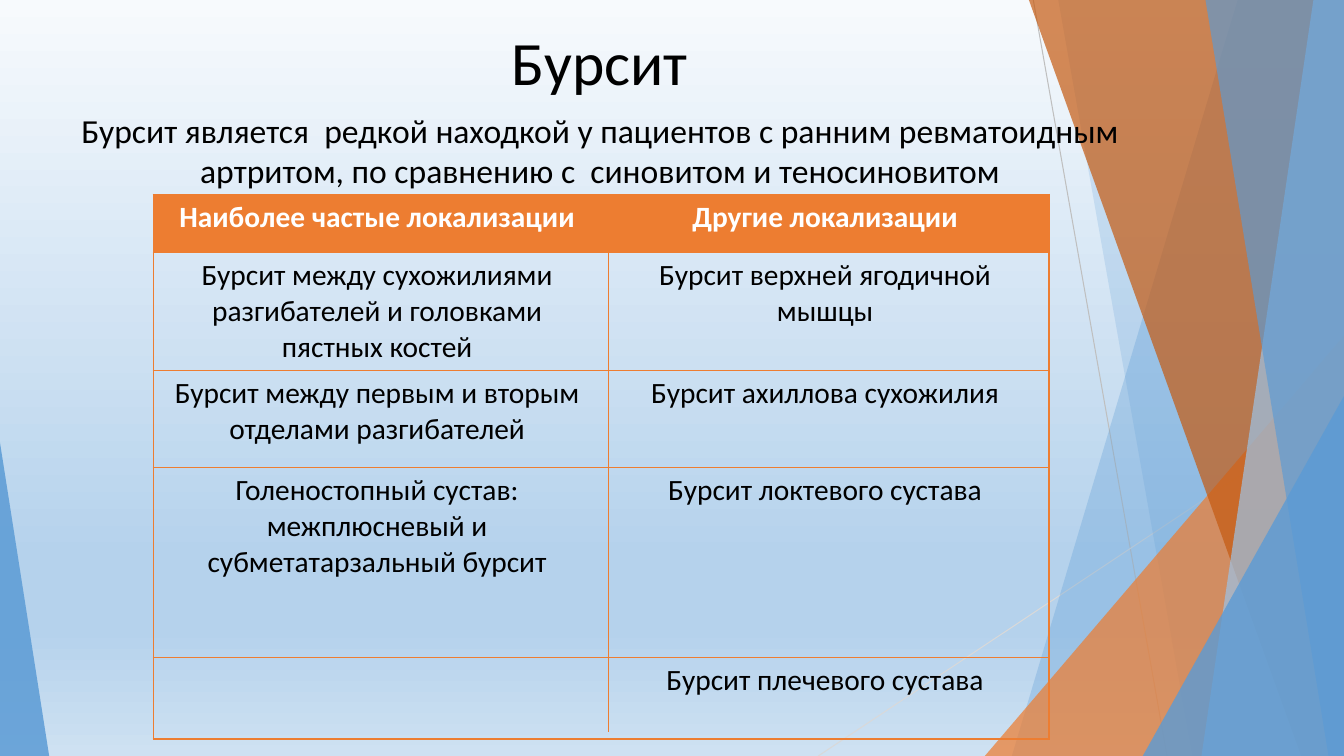
from copy import deepcopy
from dataclasses import dataclass

from lxml.etree import SubElement
from pptx import Presentation
from pptx.dml.color import RGBColor
from pptx.enum.shapes import MSO_CONNECTOR as Connector, MSO_SHAPE as Preset
from pptx.enum.text import MSO_ANCHOR as Anchor, PP_ALIGN as Align
from pptx.oxml.ns import qn
from pptx.slide import Slide
from pptx.util import Cm, Pt

BLACK = RGBColor(0x00, 0x00, 0x00)
WHITE = RGBColor(0xFF, 0xFF, 0xFF)
BLUE = RGBColor(0x5B, 0x9B, 0xD5)
LIGHT_BLUE = RGBColor(0x9D, 0xC3, 0xE6)
ORANGE = RGBColor(0xED, 0x7D, 0x31)
BROWN = RGBColor(0xC5, 0x5A, 0x11)
GREY = RGBColor(0xBF, 0xBF, 0xBF)
PALE_GREY = RGBColor(0xD9, 0xD9, 0xD9)
FONT = "Calibri"
WIDTH, HEIGHT = 33.87, 19.05

BACKDROP = [
    (0, RGBColor(0xF7, 0xFA, 0xFD)),
    (74, RGBColor(0xB5, 0xD2, 0xEC)),
    (83, RGBColor(0xB5, 0xD2, 0xEC)),
    (100, RGBColor(0xCE, 0xE1, 0xF2)),
]


@dataclass
class Panel:
    """Slanted left edge, reaching the right side of the page."""
    top_x: float
    bottom_x: float
    color: RGBColor
    opacity: int


@dataclass
class Triangle:
    """Stands on the bottom of the page; apex 0 is left, 1 is right."""
    left: float
    top: float
    width: float
    apex: int
    color: RGBColor
    opacity: int


@dataclass
class Line:
    start: tuple[float, float]
    end: tuple[float, float]
    color: RGBColor
    points: float


@dataclass
class Caption:
    text: str
    left: float
    top: float
    width: float
    height: float
    size: int
    anchor: Anchor


DECOR = [
    Line((26.04, 0), (29.41, HEIGHT), GREY, 0.75),
    Line((WIDTH, 10.24), (20.62, HEIGHT), PALE_GREY, 0.75),
    Panel(31.19, 25.5, BLUE, 30),
    Panel(26.67, 30.05, BLUE, 20),
    Triangle(24.82, 8.46, 9.05, 1, ORANGE, 72),
    Panel(25.93, 32.79, BROWN, 70),
    Panel(33.1, 30.28, LIGHT_BLUE, 70),
    Panel(30.38, 33.48, BLUE, 65),
    Triangle(28.8, 9.98, 5.07, 1, BLUE, 80),
    Triangle(0, 11.15, 1.24, 0, BLUE, 85),
]

CAPTIONS = [
    Caption("Бурсит", 3.18, 0, 23.88, 3.05, 44, Anchor.MIDDLE),
    Caption("Бурсит является  редкой находкой у пациентов с ранним ревматоидным "
            "артритом, по сравнению с  синовитом и теносиновитом",
            1.57, 2.64, 27.1, 2.24, 24, Anchor.TOP),
]

LOCATIONS = [
    ("Наиболее частые локализации", "Другие локализации"),
    ("Бурсит между сухожилиями разгибателей и головками пястных костей",
     "Бурсит верхней ягодичной мышцы"),
    ("Бурсит между первым и вторым отделами разгибателей",
     "Бурсит ахиллова сухожилия"),
    ("Голеностопный сустав: межплюсневый и субметатарзальный бурсит",
     "Бурсит локтевого сустава"),
    ("", "Бурсит плечевого сустава"),
]
TABLE_LEFT, TABLE_TOP, COLUMN_WIDTH = 3.86, 4.9, 11.29
ROW_HEIGHTS = [1.47, 2.97, 2.44, 4.78, 2.06]
DIVIDER = Line((15.34, TABLE_TOP), (15.34, 18.44), ORANGE, 1)


def paint_backdrop(page: Slide) -> None:
    fill = page.background.fill
    fill.gradient()
    fill.gradient_angle = 270
    stops = page.background._cSld.find(".//" + qn("a:gsLst"))
    while len(stops) < len(BACKDROP):
        stops.append(deepcopy(stops[0]))
    for stop, (position, color) in zip(fill.gradient_stops, BACKDROP):
        stop.position = position / 100
        stop.color.rgb = color


def draw_line(page: Slide, line: Line) -> None:
    ends = [Cm(value) for value in line.start + line.end]
    connector = page.shapes.add_connector(Connector.STRAIGHT, *ends)
    connector.line.color.rgb = line.color
    connector.line.width = Pt(line.points)
    SubElement(connector._element.spPr, qn("a:effectLst"))


def draw_facet(page: Slide, facet: Panel | Triangle) -> None:
    if isinstance(facet, Panel):
        builder = page.shapes.build_freeform(Cm(facet.top_x), 0, scale=1.0)
        corners = [(WIDTH, 0), (WIDTH, HEIGHT), (facet.bottom_x, HEIGHT)]
        builder.add_line_segments([(Cm(x), Cm(y)) for x, y in corners])
        shape = builder.convert_to_shape()
    else:
        shape = page.shapes.add_shape(
            Preset.ISOSCELES_TRIANGLE, Cm(facet.left), Cm(facet.top),
            Cm(facet.width), Cm(HEIGHT - facet.top))
        shape.adjustments[0] = facet.apex
    shape.shadow.inherit = False
    shape.line.fill.background()
    shape.fill.solid()
    shape.fill.fore_color.rgb = facet.color
    color = shape._element.spPr.find(".//" + qn("a:srgbClr"))
    SubElement(color, qn("a:alpha"), val=str(facet.opacity * 1000))


def style_text(frame, size: int, color: RGBColor, bold: bool = False) -> None:
    for para in frame.paragraphs:
        para.alignment = Align.CENTER
        font = para.font
        font.name, font.size, font.bold = FONT, Pt(size), bold
        font.color.rgb = color
        for span in para.runs:
            span.font.name, span.font.size, span.font.bold = FONT, Pt(size), bold
            span.font.color.rgb = color


def draw_caption(page: Slide, caption: Caption) -> None:
    box = page.shapes.add_textbox(Cm(caption.left), Cm(caption.top),
                                  Cm(caption.width), Cm(caption.height))
    frame = box.text_frame
    frame.word_wrap = True
    frame.vertical_anchor = caption.anchor
    frame.text = caption.text
    style_text(frame, caption.size, BLACK)


def set_borders(cell, visible: str) -> None:
    properties = cell._tc.get_or_add_tcPr()
    for side in "LRTB":
        border = SubElement(properties, qn(f"a:ln{side}"), w=str(Pt(1)))
        if side in visible:
            fill = SubElement(border, qn("a:solidFill"))
            SubElement(fill, qn("a:srgbClr"), val=str(ORANGE))
        else:
            SubElement(border, qn("a:noFill"))


def draw_table(page: Slide) -> None:
    table = page.shapes.add_table(
        len(LOCATIONS), 2, Cm(TABLE_LEFT), Cm(TABLE_TOP),
        Cm(2 * COLUMN_WIDTH), Cm(sum(ROW_HEIGHTS))).table
    table.first_row = table.horz_banding = False
    for column in table.columns:
        column.width = Cm(COLUMN_WIDTH)
    for row_index, (texts, height) in enumerate(zip(LOCATIONS, ROW_HEIGHTS)):
        table.rows[row_index].height = Cm(height)
        header = row_index == 0
        for column_index, text in enumerate(texts):
            cell = table.cell(row_index, column_index)
            cell.text_frame.text = text
            style_text(cell.text_frame, 21, WHITE if header else BLACK, header)
            set_borders(cell, "TB" + "LR"[column_index])
            if header:
                cell.fill.solid()
                cell.fill.fore_color.rgb = ORANGE
            else:
                cell.fill.background()


def main() -> None:
    deck = Presentation()
    deck.slide_width, deck.slide_height = Cm(WIDTH), Cm(HEIGHT)
    page = deck.slides.add_slide(deck.slide_layouts[6])

    # Backdrop and slanted decoration
    paint_backdrop(page)
    for item in DECOR:
        if isinstance(item, Line):
            draw_line(page, item)
        else:
            draw_facet(page, item)

    # Title, summary and table of locations
    for caption in CAPTIONS:
        draw_caption(page, caption)
    draw_table(page)
    draw_line(page, DIVIDER)
    deck.save("out.pptx")


if __name__ == "__main__":
    main()
